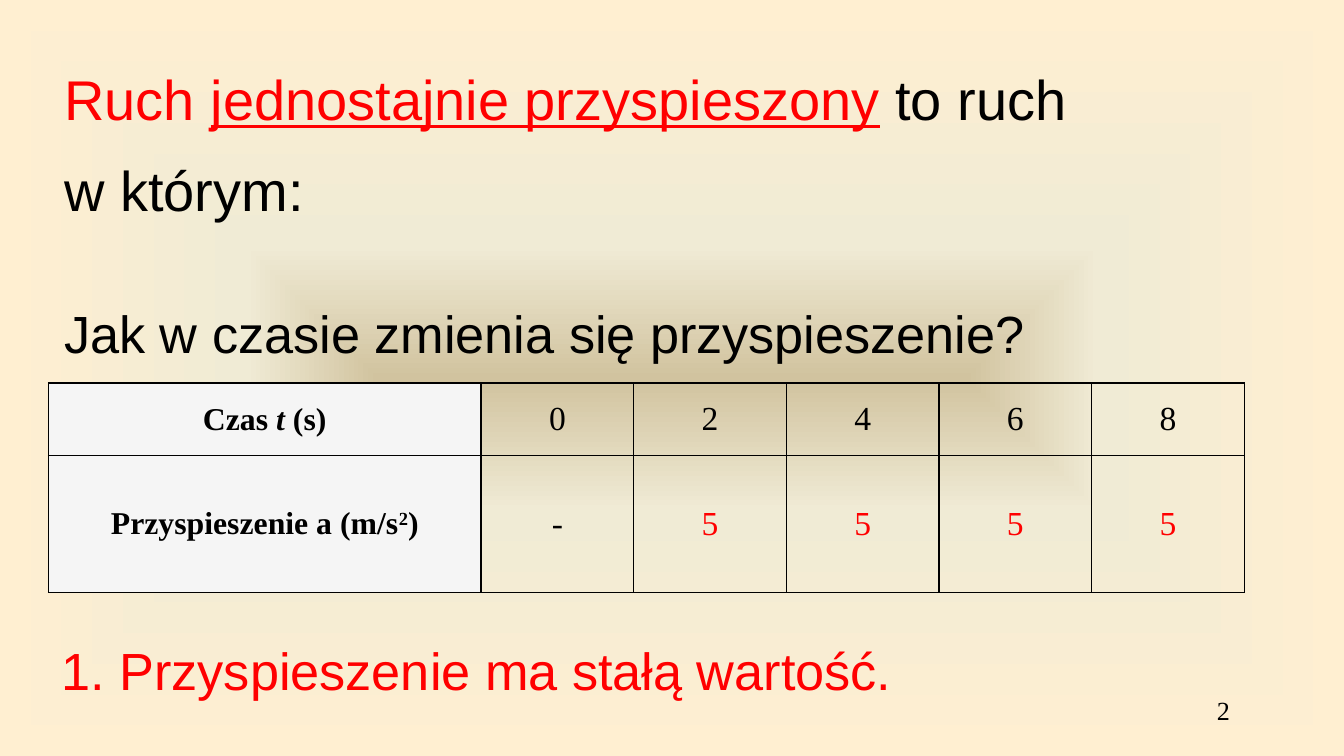
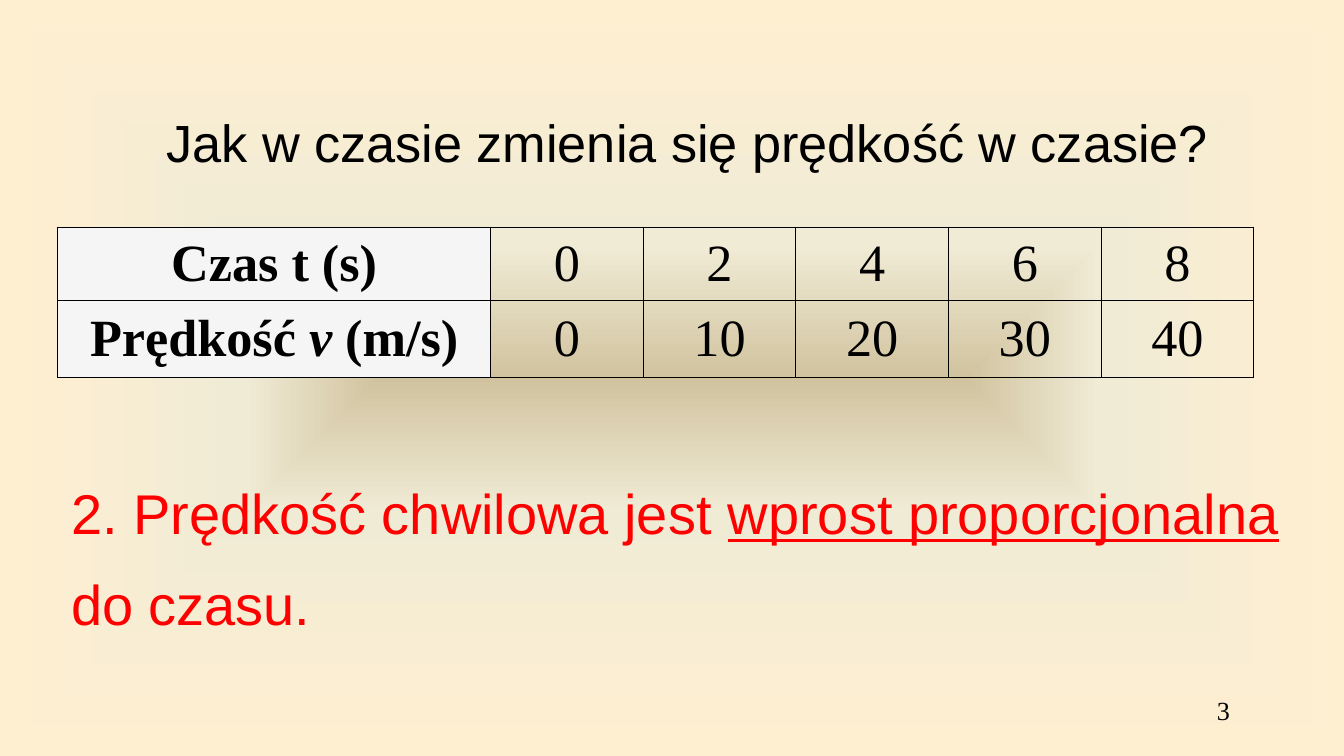
import pptx
import pptx.dml.color
import pptx.enum.text
import pptx.oxml
import pptx.oxml.ns
import pptx.util

COLORS = {
    "ink": "000000",
    "accent": "FF0000",
    "label": "F5F5F5",
    "glow": "D1C39F",
    "haze": "F0EBD5",
    "edge": "FFEFD1",
}
SANS = "Arial"
SERIF = "Times New Roman"
SLIDE_WIDTH = pptx.util.Inches(10)
SLIDE_HEIGHT = SLIDE_WIDTH * 9 // 16
GRID_COLUMNS = 100
TIMES = ["0", "2", "4", "6", "8"]
TABLE_WIDTH = 89
LABEL_WIDTH = 32.2
LINE_SPACING = 1.35

MIDDLE = pptx.enum.text.MSO_ANCHOR.MIDDLE
TOP = pptx.enum.text.MSO_ANCHOR.TOP
CENTER = pptx.enum.text.PP_ALIGN.CENTER
RIGHT = pptx.enum.text.PP_ALIGN.RIGHT
GROW = pptx.enum.text.MSO_AUTO_SIZE.SHAPE_TO_FIT_TEXT


def grid(units):
    return round(units * SLIDE_WIDTH / GRID_COLUMNS)


def rgb(name):
    return pptx.dml.color.RGBColor.from_string(COLORS[name])


def write(frame, text, align=None, spacing=None, before=None, **base):
    paragraph = frame.paragraphs[0]
    paragraph.alignment = align
    paragraph.line_spacing = spacing
    paragraph.space_before = before
    parts = [(text, {})] if isinstance(text, str) else text
    for words, changes in parts:
        look = {"font": SANS, "size": 28, "color": "ink", **base, **changes}
        for index, line in enumerate(words.split("\n")):
            if index:
                paragraph.add_line_break()
            run = paragraph.add_run()
            run.text = line
            run.font.name = look["font"]
            run.font.size = pptx.util.Pt(look["size"])
            run.font.color.rgb = rgb(look["color"])
            run.font.bold = look.get("bold")
            run.font.italic = look.get("italic")
            run.font.underline = look.get("underline")
            if look.get("raised"):
                run._r.get_or_add_rPr().set("baseline", "30000")


def add_text(slide, place, text, anchor=TOP, wrap=True, grow=True, **style):
    frame = slide.shapes.add_textbox(*map(grid, place)).text_frame
    frame.word_wrap = wrap
    frame.vertical_anchor = anchor
    if grow:
        frame.auto_size = GROW
    write(frame, text, **style)


def add_statement(slide, place, text, **style):
    add_text(slide, place, text, spacing=LINE_SPACING, **style)


def add_page_number(slide, number):
    add_text(slide, (71.7, 51.2, 20.8, 3.8), str(number), grow=False,
             align=RIGHT, font=SERIF, size=14)


def outline(cell):
    properties = cell._tc.get_or_add_tcPr()
    for index, side in enumerate("LRTB"):
        properties.insert(index, pptx.oxml.parse_xml(
            f'<a:ln{side} {pptx.oxml.ns.nsdecls("a")} w="{pptx.util.Pt(0.75)}">'
            f'<a:solidFill><a:srgbClr val="{COLORS["ink"]}"/></a:solidFill>'
            f'</a:ln{side}>'))


def fill_cell(cell, text, background=None, **style):
    cell.vertical_anchor = MIDDLE
    cell.margin_left = cell.margin_right = grid(1)
    cell.margin_top = cell.margin_bottom = grid(0.4)
    if background:
        cell.fill.solid()
        cell.fill.fore_color.rgb = rgb(background)
    else:
        cell.fill.background()
    outline(cell)
    write(cell.text_frame, text, align=CENTER, font=SERIF, **style)


def add_measurements(slide, left, top, heights, rows, label_size, value_size,
                     constant=None):
    table = slide.shapes.add_table(
        len(rows), len(TIMES) + 1,
        *map(grid, (left, top, TABLE_WIDTH, sum(heights)))).table
    table.first_row = table.horz_banding = False
    value_width = (TABLE_WIDTH - LABEL_WIDTH) / len(TIMES)
    for index, column in enumerate(table.columns):
        column.width = grid(value_width if index else LABEL_WIDTH)
    for row, height, (label, values) in zip(table.rows, heights, rows):
        row.height = grid(height)
        label_cell, *value_cells = row.cells
        fill_cell(label_cell, label, "label", size=label_size, bold=True)
        for cell, value in zip(value_cells, values):
            marked = value == constant
            fill_cell(cell, value, size=value_size,
                      color="accent" if marked else "ink",
                      before=pptx.util.Pt(3.6) if marked else None)


def set_backdrop(master):
    master.background.fill.gradient()
    gradient = master.element.xpath("./p:cSld/p:bg//a:gradFill")[0]
    stops = "".join(
        f'<a:gs pos="{share * 1000}"><a:srgbClr val="{COLORS[name]}"/></a:gs>'
        for share, name in ((0, "glow"), (35, "haze"), (100, "edge")))
    center = " ".join(f'{side}="50000"' for side in "ltrb")
    gradient.getparent().replace(gradient, pptx.oxml.parse_xml(
        f'<a:gradFill {pptx.oxml.ns.nsdecls("a")} rotWithShape="1">'
        f'<a:gsLst>{stops}</a:gsLst>'
        f'<a:path path="shape"><a:fillToRect {center}/></a:path></a:gradFill>'))


def build_acceleration(slide):
    add_statement(slide, (3.8, 2.5, 94.5, 14.6), [
        ("Ruch ", {}),
        ("jednostajnie przyspieszony", {"underline": True}),
        (" ", {}),
        ("to ruch \nw którym:", {"color": "ink"}),
    ], anchor=MIDDLE, size=30, color="accent")
    add_page_number(slide, 2)
    add_measurements(slide, 3.6, 28.5, (5.4, 10.2), [
        ([("Czas ", {}), ("t", {"italic": True}), (" (s)", {})], TIMES),
        ([("Przyspieszenie a (m/s", {}), ("2", {"raised": True}), (")", {})],
         ["-", "5", "5", "5", "5"]),
    ], label_size=17, value_size=18, constant="5")
    add_statement(slide, (3.6, 45.4, 64.5, 7.4),
                  "1. Przyspieszenie ma stałą wartość.", wrap=False, color="accent")
    add_statement(slide, (3.8, 20.3, 86.4, 7.4),
                  "Jak w czasie zmienia się przyspieszenie?")


def build_velocity(slide):
    add_statement(slide, (4.3, 33.3, 94.5, 14.6), [
        ("2. Prędkość chwilowa jest ", {}),
        ("wprost proporcjonalna ", {"underline": True}),
        ("do czasu.", {}),
    ], anchor=MIDDLE, size=30, color="accent")
    add_page_number(slide, 3)
    add_measurements(slide, 4.3, 16.9, (5.4, 5.7), [
        ("Czas t (s)", TIMES),
        ([("Prędkość ", {}), ("v ", {"italic": True}), ("(m/s)", {})],
         ["0", "10", "20", "30", "40"]),
    ], label_size=28, value_size=28)
    add_statement(slide, (11.4, 6.1, 82.7, 7.4),
                  "Jak w czasie zmienia się prędkość w czasie?")


def main():
    deck = pptx.Presentation()
    deck.slide_width = SLIDE_WIDTH
    deck.slide_height = SLIDE_HEIGHT
    set_backdrop(deck.slide_master)
    blank = deck.slide_layouts[6]
    for build in (build_acceleration, build_velocity):
        build(deck.slides.add_slide(blank))
    deck.save("out.pptx")


if __name__ == "__main__":
    main()
